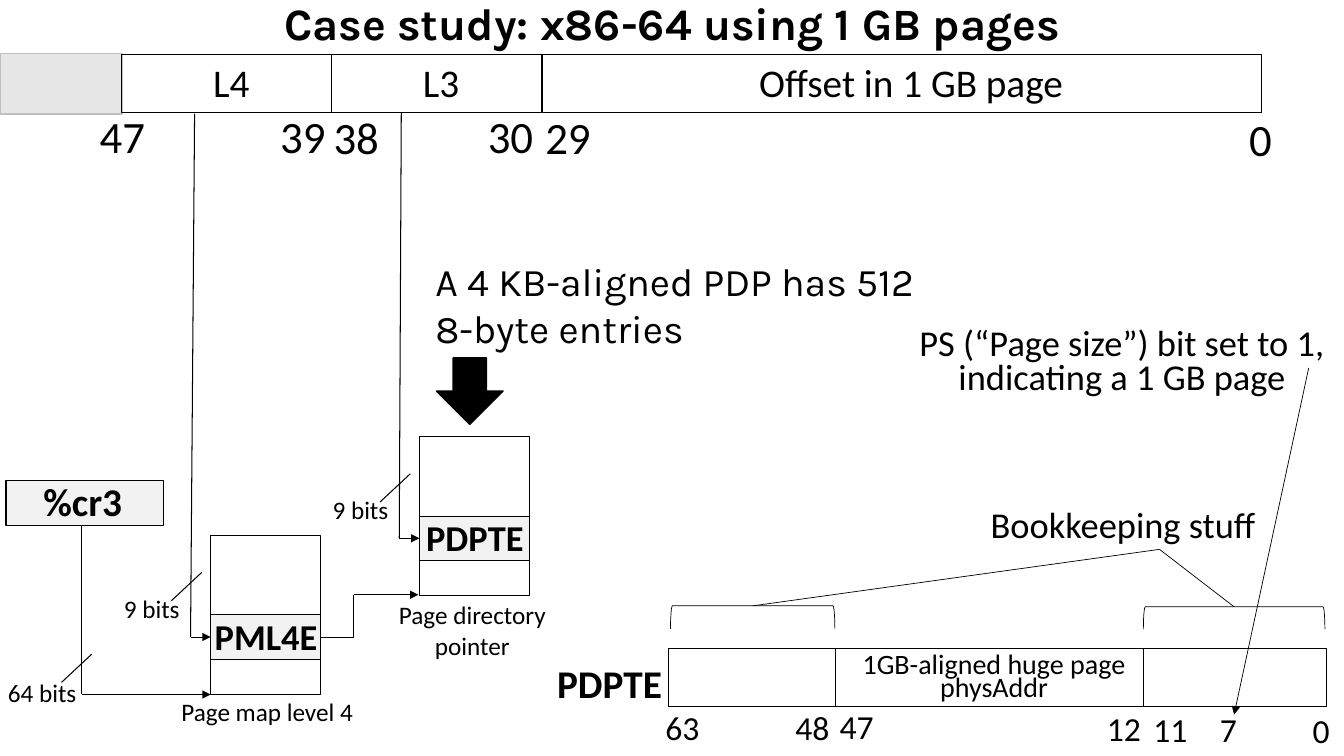
from lxml.etree import SubElement
from pptx import Presentation
from pptx.dml.color import RGBColor
from pptx.enum.shapes import MSO_CONNECTOR, MSO_SHAPE as Preset
from pptx.enum.text import MSO_ANCHOR as Anchor, PP_ALIGN as Align
from pptx.oxml.ns import qn
from pptx.util import Inches, Pt

COLORS = {"ink": "000000", "entry": "F2F2F2", "unused": "E7E6E6", "unused_edge": "BFBFBF"}
TOP, LEFT, BOTTOM, RIGHT = range(4)
CENTER = Align.CENTER


def color(name):
    return RGBColor.from_string(COLORS[name])


def add_text(slide, box, text, size, align=Align.LEFT, spacing=None, anchor=Anchor.TOP, **font):
    frame = slide.shapes.add_textbox(*map(Inches, box)).text_frame
    frame.word_wrap = True
    frame.vertical_anchor = anchor
    paragraph = frame.paragraphs[0]
    paragraph.alignment = align
    if spacing:
        paragraph.line_spacing = spacing
    run = paragraph.add_run()
    run.text = text
    run.font.color.rgb = color("ink")
    for name, value in ({"name": "Calibri", "size": Pt(size)} | font).items():
        setattr(run.font, name, value)


def add_box(slide, box, fill=None, edge="ink", width=0.75, preset=Preset.RECTANGLE, rotation=0):
    shape = slide.shapes.add_shape(preset, *map(Inches, box))
    shape.shadow.inherit = False
    shape.rotation = rotation
    if fill:
        shape.fill.solid()
        shape.fill.fore_color.rgb = color(fill)
    else:
        shape.fill.background()
    shape.line.color.rgb = color(edge)
    shape.line.width = Pt(width)
    return shape


def add_line(slide, start, end, width=0.75, arrow=False):
    line = slide.shapes.add_connector(MSO_CONNECTOR.STRAIGHT, *map(Inches, (*start, *end)))
    line.line.color.rgb = color("ink")
    line.line.width = Pt(width)
    if arrow:
        SubElement(line.line._get_or_add_ln(), qn("a:tailEnd"), type="triangle")
    SubElement(line._element.spPr, qn("a:effectLst"))
    return line


def add_bit_width(slide, x, y, text, label_box):
    """Slash across a wire at its upper right end (x, y), with the wire's width."""
    add_line(slide, (x, y), (x - 0.3, y + 0.28))
    add_text(slide, label_box, text, 18)


def add_page_table(slide, x, y, entry_name, caption, caption_box, index_start):
    """Page table with one entry, selected by an index from the address."""
    add_box(slide, (x, y, 1.09, 1.58))
    entry = add_box(slide, (x, y + 0.79, 1.09, 0.44), "entry")
    add_text(slide, (x - 0.07, y + 0.73, 1.24, 0.54), entry_name, 26, CENTER, bold=True)
    add_text(slide, caption_box, caption, 18, CENTER)
    turn = (x - 0.2, y + 1.01)
    add_line(slide, index_start, turn)
    add_line(slide, turn, (x, y + 1.01), arrow=True).end_connect(entry, LEFT)
    add_bit_width(slide, x - 0.09, y + 0.37, "9 bits", (x - 0.96, y + 0.53, 0.89, 0.4))
    return entry


def add_address(slide):
    add_box(slide, (0, 0.53, 1.21, 0.6), "unused", "unused_edge", 1)
    for x, width in ((1.21, 2.08), (3.29, 2.08), (5.38, 7.13)):
        add_box(slide, (x, 0.54, width, 0.58))
    for name, x, width in (("L4", 1.19, 2.21), ("L3", 3.27, 2.21),
                           ("Offset in 1 GB page", 7.29, 3.49)):
        add_text(slide, (x, 0.53, width, 0.57), name, 28, CENTER)
    for bit, x, y in (("47", 0.89, 1.03), ("39", 2.68, 1.03), ("38", 3.21, 1.04),
                      ("30", 4.74, 1.03), ("29", 5.31, 1.04), ("0", 12.29, 1.06)):
        add_text(slide, (x, y, 0.7, 0.64), bit, 32)


def add_table_walk(slide):
    add_box(slide, (0.06, 4.77, 1.56, 0.44), "entry")
    add_text(slide, (0.28, 4.69, 1.08, 0.57), "%cr3", 28, CENTER, bold=True)
    add_line(slide, (0.81, 5.21), (0.81, 6.89))
    add_line(slide, (0.81, 6.89), (2.09, 6.89), arrow=True)
    add_bit_width(slide, 0.91, 6.49, "64 bits", (-0.02, 6.67, 1.23, 0.46))

    pml4e = add_page_table(slide, 2.09, 5.31, "PML4E", "Page map level 4",
                           (1.64, 6.86, 2.02, 0.4), (1.93, 1.13))
    add_page_table(slide, 4.16, 4.33, "PDPTE", "Page directory pointer",
                   (3.82, 5.9, 1.73, 0.71), (3.98, 1.12))
    add_line(slide, (3.18, 6.32), (3.51, 6.32)).begin_connect(pml4e, RIGHT)
    add_line(slide, (3.51, 6.32), (3.51, 5.9))
    add_line(slide, (3.51, 5.9), (4.15, 5.9), arrow=True)

    add_box(slide, (4.33, 3.55, 0.66, 0.66), "ink", width=1, preset=Preset.DOWN_ARROW)
    add_text(slide, (4.22, 2.5, 5, 1.04), "A 4 KB-aligned PDP has 512 8-byte entries",
             28, name="Karla")


def add_entry_format(slide):
    for x, width in ((6.63, 1.66), (8.29, 3.05), (11.34, 1.82)):
        add_box(slide, (x, 6.43, width, 0.58))
    add_text(slide, (5.37, 6.49, 1.35, 0.57), "PDPTE", 28, CENTER, bold=True)
    add_text(slide, (8.21, 6.48, 3.3, 0.57), "1GB-aligned huge page physAddr",
             20, CENTER, Pt(16))
    for bit, x, y in (("63", 6.5, 6.96), ("48", 7.79, 6.96), ("47", 8.23, 6.95),
                      ("12", 10.88, 6.97), ("11", 11.34, 6.98), ("7", 12, 6.98)):
        add_text(slide, (x, y, 0.62, 0.5), bit, 24)
    add_text(slide, (12.92, 6.99, 0.38, 0.5), "0", 24)

    add_text(slide, (9.02, 4.93, 4.24, 0.54), "Bookkeeping stuff", 26, CENTER)
    for bracket, tip in (((7.35, 5.31, 0.23, 1.63), (7.47, 6.01)),
                         ((12.13, 5.23, 0.22, 1.8), (12.24, 6.02))):
        add_box(slide, bracket, width=0.5, preset=Preset.LEFT_BRACKET, rotation=90)
        add_line(slide, (11.5, 5.45), tip, 0.5)

    add_line(slide, (12.98, 3.65), (12.24, 7.09), 0.5, arrow=True)
    add_text(slide, (9.01, 3.23, 4.24, 0.79),
             "PS (“Page size”) bit set to 1, indicating a 1 GB page", 26, CENTER, Pt(24))


def main():
    deck = Presentation()
    deck.slide_width, deck.slide_height = Inches(13.33), Inches(7.5)
    slide = deck.slides.add_slide(deck.slide_layouts[6])
    add_text(slide, (2.42, -0.03, 8.5, 0.58), "Case study: x86-64 using 1 GB pages",
             32, CENTER, 0.9, Anchor.MIDDLE, name="Karla", bold=True)
    add_address(slide)
    add_table_walk(slide)
    add_entry_format(slide)
    deck.save("out.pptx")


if __name__ == "__main__":
    main()
